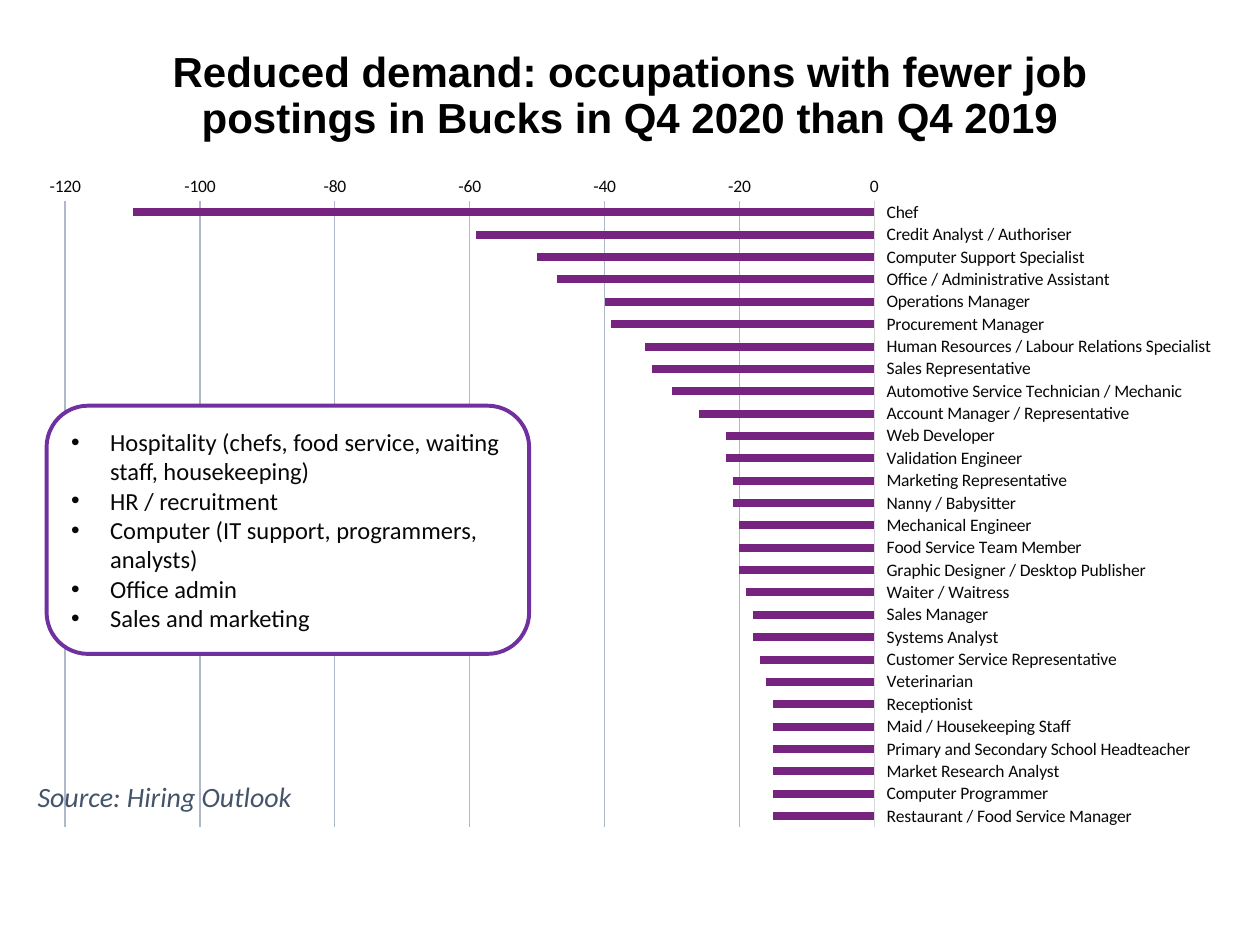
from dataclasses import dataclass

from lxml import etree
from pptx import Presentation
from pptx.chart.data import CategoryChartData
from pptx.dml.color import RGBColor
from pptx.enum.chart import XL_CHART_TYPE, XL_TICK_LABEL_POSITION, XL_TICK_MARK
from pptx.enum.shapes import MSO_SHAPE
from pptx.enum.text import MSO_ANCHOR, MSO_AUTO_SIZE, PP_ALIGN
from pptx.oxml.ns import qn
from pptx.util import Inches, Pt

BAR = XL_CHART_TYPE.BAR_CLUSTERED
HIGH = XL_TICK_LABEL_POSITION.HIGH
NO_TICK = XL_TICK_MARK.NONE
ROUND = MSO_SHAPE.ROUNDED_RECTANGLE
MIDDLE = MSO_ANCHOR.MIDDLE
GROW = MSO_AUTO_SIZE.SHAPE_TO_FIT_TEXT
LEFT, CENTER = PP_ALIGN.LEFT, PP_ALIGN.CENTER


@dataclass(frozen=True)
class Theme:
    head: str = "Arial"
    body: str = "Calibri"
    black: str = "000000"
    ink: str = "080808"
    slate: str = "44546A"
    white: str = "FFFFFF"
    bar: str = "772480"
    frame: str = "7030A0"
    axis: str = "D9D9D9"
    grid: str = "ADB9CA"
    title: int = 24
    source: int = 16
    list: int = 14
    label: int = 10


THEME = Theme()

TITLE = "Reduced demand: occupations with fewer job postings in Bucks in Q4 2020 than Q4 2019"
SOURCE = "Source: Hiring Outlook"
GROUPS = [
    "Hospitality (chefs, food service, waiting staff, housekeeping)",
    "HR / recruitment",
    "Computer (IT support, programmers, analysts)",
    "Office admin",
    "Sales and marketing",
]
JOBS = [
    ("Chef", -110),
    ("Credit Analyst / Authoriser", -59),
    ("Computer Support Specialist", -50),
    ("Office / Administrative Assistant", -47),
    ("Operations Manager", -40),
    ("Procurement Manager", -39),
    ("Human Resources / Labour Relations Specialist", -34),
    ("Sales Representative", -33),
    ("Automotive Service Technician / Mechanic", -30),
    ("Account Manager / Representative", -26),
    ("Web Developer", -22),
    ("Validation Engineer", -22),
    ("Marketing Representative", -21),
    ("Nanny / Babysitter", -21),
    ("Mechanical Engineer", -20),
    ("Food Service Team Member", -20),
    ("Graphic Designer / Desktop Publisher", -20),
    ("Waiter / Waitress", -19),
    ("Sales Manager", -18),
    ("Systems Analyst", -18),
    ("Customer Service Representative", -17),
    ("Veterinarian", -16),
    ("Receptionist", -15),
    ("Maid / Housekeeping Staff", -15),
    ("Primary and Secondary School Headteacher", -15),
    ("Market Research Analyst", -15),
    ("Computer Programmer", -15),
    ("Restaurant / Food Service Manager", -15),
]


def assign(item, **values):
    for name, value in values.items():
        setattr(item, name, value)


def style(font, name, size, color, **extra):
    assign(font, name=name, size=Pt(size), **extra)
    font.color.rgb = RGBColor.from_string(color)


def stroke(line, color, width):
    line.color.rgb = RGBColor.from_string(color)
    line.width = Pt(width)


def paint(fill, color):
    fill.solid()
    fill.fore_color.rgb = RGBColor.from_string(color)


def add_title(slide, box):
    title = slide.shapes.title
    assign(title, **dict(zip(("left", "top", "width", "height"), box)))
    frame = title.text_frame
    assign(frame, text=TITLE, vertical_anchor=MIDDLE, word_wrap=True)
    para = frame.paragraphs[0]
    assign(para, alignment=CENTER, line_spacing=0.9)
    style(para.runs[0].font, THEME.head, THEME.title, THEME.black, bold=True)


def place_plot(chart, **parts):
    """Fix the inner plot area as fractions of the chart box."""
    area = chart._chartSpace.chart.plotArea
    for old in area.findall(qn("c:layout")):
        area.remove(old)
    layout = etree.Element(qn("c:layout"))
    manual = etree.SubElement(layout, qn("c:manualLayout"))
    values = {"layoutTarget": "inner", "xMode": "edge", "yMode": "edge", **parts}
    for name, value in values.items():
        etree.SubElement(manual, qn(f"c:{name}")).set("val", str(value))
    area.insert(0, layout)


def add_bars(slide, box):
    data = CategoryChartData(number_format="#,##0")
    data.categories = [job for job, _ in JOBS]
    data.add_series("Series 1", [change for _, change in JOBS])
    chart = slide.shapes.add_chart(BAR, *box, data).chart
    assign(chart, has_legend=False, has_title=False)
    style(chart.font, THEME.body, THEME.label, THEME.black)
    place_plot(chart, x=0.033, y=0.057, w=0.669, h=0.922)

    plot = chart.plots[0]
    assign(plot, gap_width=182, vary_by_categories=False)
    bars = plot.series[0]
    bars.invert_if_negative = False
    paint(bars.format.fill, THEME.bar)

    jobs, scale = chart.category_axis, chart.value_axis
    for axis in (jobs, scale):
        assign(axis, major_tick_mark=NO_TICK, minor_tick_mark=NO_TICK)
        style(axis.tick_labels.font, THEME.body, THEME.label, THEME.ink)
    assign(jobs, reverse_order=True, tick_label_position=HIGH)
    stroke(jobs.format.line, THEME.axis, 0.75)
    assign(scale, minimum_scale=-120, maximum_scale=0, major_unit=20, has_major_gridlines=True)
    assign(scale.tick_labels, number_format="#,##0", number_format_is_linked=False)
    scale.format.line.fill.background()
    stroke(scale.major_gridlines.format.line, THEME.grid, 0.75)


def add_bullet(para, indent):
    props = para._p.get_or_add_pPr()
    props.set("marL", str(indent))
    props.set("indent", str(-indent))
    etree.SubElement(props, qn("a:buFont")).set("typeface", "Arial")
    etree.SubElement(props, qn("a:buChar")).set("char", "•")


def add_groups(slide, box):
    panel = slide.shapes.add_shape(ROUND, *box)
    panel.shadow.inherit = False
    paint(panel.fill, THEME.white)
    stroke(panel.line, THEME.frame, 2.25)
    frame = panel.text_frame
    assign(frame, word_wrap=True, vertical_anchor=MIDDLE, text="\n".join(GROUPS))
    for para in frame.paragraphs:
        para.alignment = LEFT
        add_bullet(para, Inches(0.31))
        style(para.runs[0].font, THEME.body, THEME.list, THEME.ink)


def add_source(slide, box):
    frame = slide.shapes.add_textbox(*box).text_frame
    assign(frame, word_wrap=True, auto_size=GROW, text=SOURCE)
    para = frame.paragraphs[0]
    assign(para, line_spacing=1.07, space_after=Pt(8))
    style(para.runs[0].font, THEME.body, THEME.source, THEME.slate, italic=True)


def main():
    deck = Presentation()
    assign(deck, slide_width=Inches(10), slide_height=Inches(7.5))
    slide = deck.slides.add_slide(deck.slide_layouts.get_by_name("Title Only"))
    regions = [
        (add_title, (0.69, 0.26, 8.62, 1.02)),
        (add_bars, (0.2, 1.29, 9.6, 5.39)),
        (add_groups, (0.37, 3.22, 3.83, 1.97)),
        (add_source, (0.2, 6.12, 6.67, 0.38)),
    ]
    for draw, box in regions:
        draw(slide, [Inches(side) for side in box])
    deck.save("out.pptx")


if __name__ == "__main__":
    main()
